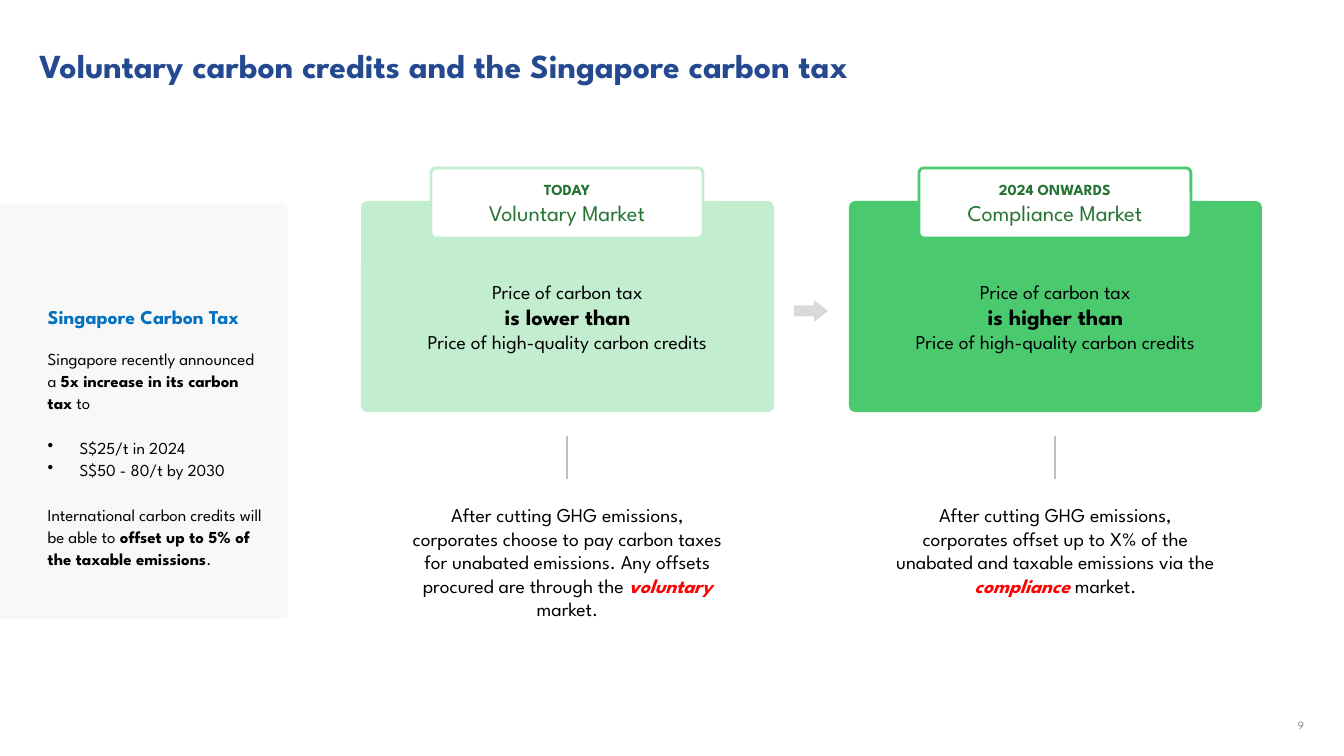
"""Build a slide on voluntary carbon credits and the Singapore carbon tax."""
import pptx
import pptx.dml.color
import pptx.enum.shapes
import pptx.enum.text
import pptx.oxml.ns
import pptx.util
from lxml import etree

RGB = pptx.dml.color.RGBColor
ALIGN = pptx.enum.text.PP_ALIGN
ANCHOR = pptx.enum.text.MSO_ANCHOR
SHAPE = pptx.enum.shapes.MSO_SHAPE
Pt = pptx.util.Pt
PX = 914400 / 100.8
FONT = "League Spartan"

NAVY = RGB(0x24, 0x49, 0x90)
BLUE = RGB(0x00, 0x70, 0xC0)
BLACK = RGB(0x00, 0x00, 0x00)
WHITE = RGB(0xFF, 0xFF, 0xFF)
RED = RGB(0xFF, 0x00, 0x00)
DARK_GREEN = RGB(0x26, 0x73, 0x34)
PALE_GREEN = RGB(0xC3, 0xED, 0xCF)
GREEN = RGB(0x4A, 0xC9, 0x6F)
PANEL_GREY = RGB(0xF8, 0xF8, 0xF8)
ARROW_GREY = RGB(0xD9, 0xD9, 0xD9)
LINE_GREY = RGB(0xBF, 0xBF, 0xBF)
NUMBER_GREY = RGB(0x80, 0x80, 0x80)


def px(*lengths):
    """Turn pixel lengths into EMU."""
    return [round(length * PX) for length in lengths]


def write(box, lines, insets, anchor=ANCHOR.MIDDLE, align=ALIGN.CENTER):
    """Fill a box with (text, size, colour, bold) lines; ** toggles bold."""
    frame = box.text_frame
    frame.word_wrap = True
    frame.vertical_anchor = anchor
    (frame.margin_left, frame.margin_top,
     frame.margin_right, frame.margin_bottom) = px(*insets)
    for index, (text, size, color, bold) in enumerate(lines):
        para = frame.add_paragraph() if index else frame.paragraphs[0]
        para.alignment = align
        para.font.name, para.font.size = FONT, Pt(size)
        para.font.color.rgb = color
        pieces = text.split("**")
        if len(pieces) == 1:
            para.font.bold = bold
        for number, piece in enumerate(pieces):
            span = para.add_run()
            span.text = piece
            if len(pieces) > 1:
                span.font.bold = number % 2 == 1
    return frame.paragraphs


deck = pptx.Presentation()
deck.slide_width, deck.slide_height = px(1344, 756)
page = deck.slides.add_slide(deck.slide_layouts[5])
shapes = page.shapes

title = shapes.title
title.left, title.top, title.width, title.height = px(39, 49, 1230, 36)
heading = write(title, [("Voluntary carbon credits and the Singapore carbon tax", 24, NAVY, True)],
                (0, 0, 0, 0), ANCHOR.TOP, ALIGN.LEFT)
heading[0].line_spacing = 0.9

page_number = shapes.add_textbox(*px(1278, 719, 26, 13))
write(page_number, [("9", 8, NUMBER_GREY, False)], (0, 0, 0, 0), ANCHOR.BOTTOM, ALIGN.RIGHT)

panel = shapes.add_shape(SHAPE.ROUNDED_RECTANGLE, *px(-14, 204, 302, 415))
panel.adjustments[0] = 0.02
panel.shadow.inherit = False
panel.fill.solid()
panel.fill.fore_color.rgb = PANEL_GREY
panel.line.fill.background()
panel_lines = [
    ("Singapore Carbon Tax", 14, BLUE, True),
    ("Singapore recently announced a **5x increase in its carbon tax** to", 12, BLACK, False),
    ("S$25/t in 2024", 12, BLACK, False),
    ("S$50 - 80/t by 2030", 12, BLACK, False),
    ("International carbon credits will be able to **offset up to 5% of the taxable emissions**.",
     12, BLACK, False),
]
panel_paras = write(panel, panel_lines, (60, 97, 20, 20), ANCHOR.TOP, ALIGN.LEFT)
for para, gap in zip(panel_paras, (0, 13, 16, 0, 16)):
    para.line_spacing = 1.1
    para.space_before = Pt(gap)
for para in panel_paras[2:4]:
    properties = para._p.get_or_add_pPr()
    indent = px(32)[0]
    properties.set("marL", str(indent))
    properties.set("indent", str(-indent))
    bullet = etree.Element(pptx.oxml.ns.qn("a:buChar"), char="•")
    properties.find(pptx.oxml.ns.qn("a:defRPr")).addprevious(bullet)

markets = [
    (361, PALE_GREEN, "TODAY", "Voluntary Market", "is lower than",
     "After cutting GHG emissions, corporates choose to pay carbon taxes for unabated emissions. "
     "Any offsets procured are through the **voluntary** market."),
    (849, GREEN, "2024 ONWARDS", "Compliance Market", "is higher than",
     "After cutting GHG emissions, corporates offset up to X% of the unabated and taxable "
     "emissions via the **compliance** market."),
]
for left, color, period, market, comparison, outcome in markets:
    card = shapes.add_shape(SHAPE.ROUNDED_RECTANGLE, *px(left, 201, 413, 211))
    card.adjustments[0] = 0.03
    card.shadow.inherit = False
    card.fill.solid()
    card.fill.fore_color.rgb = color
    card.line.fill.background()
    write(card, [("Price of carbon tax", 14, BLACK, False),
                 (comparison, 16, BLACK, True),
                 ("Price of high-quality carbon credits", 14, BLACK, False)], (20, 40, 20, 20))

    label = shapes.add_shape(SHAPE.ROUNDED_RECTANGLE, *px(left + 70, 168, 272, 70))
    label.adjustments[0] = 0.07
    label.shadow.inherit = False
    label.fill.solid()
    label.fill.fore_color.rgb = WHITE
    label.line.color.rgb = color
    label.line.width = Pt(2)
    write(label, [(period, 11, DARK_GREEN, True), (market, 16, DARK_GREEN, False)],
          (20, 20, 20, 20))

    stem = shapes.add_connector(pptx.enum.shapes.MSO_CONNECTOR.STRAIGHT,
                                *px(left + 206, 436, left + 206, 479))
    stem.line.color.rgb = LINE_GREY
    stem.line.width = Pt(1)
    etree.SubElement(stem._element.spPr, pptx.oxml.ns.qn("a:effectLst"))

    note = shapes.add_textbox(*px(left + 35, 498, 343, 129))
    note_paras = write(note, [(outcome, 14, BLACK, False)], (10, 5, 10, 5), ANCHOR.TOP)
    emphasis = note_paras[0].runs[1].font
    emphasis.italic = True
    emphasis.color.rgb = RED

arrow = shapes.add_shape(SHAPE.RIGHT_ARROW, *px(794, 300, 34, 22))
arrow.adjustments[1] = 0.64
arrow.shadow.inherit = False
arrow.fill.solid()
arrow.fill.fore_color.rgb = ARROW_GREY
arrow.line.fill.background()

deck.save("out.pptx")
